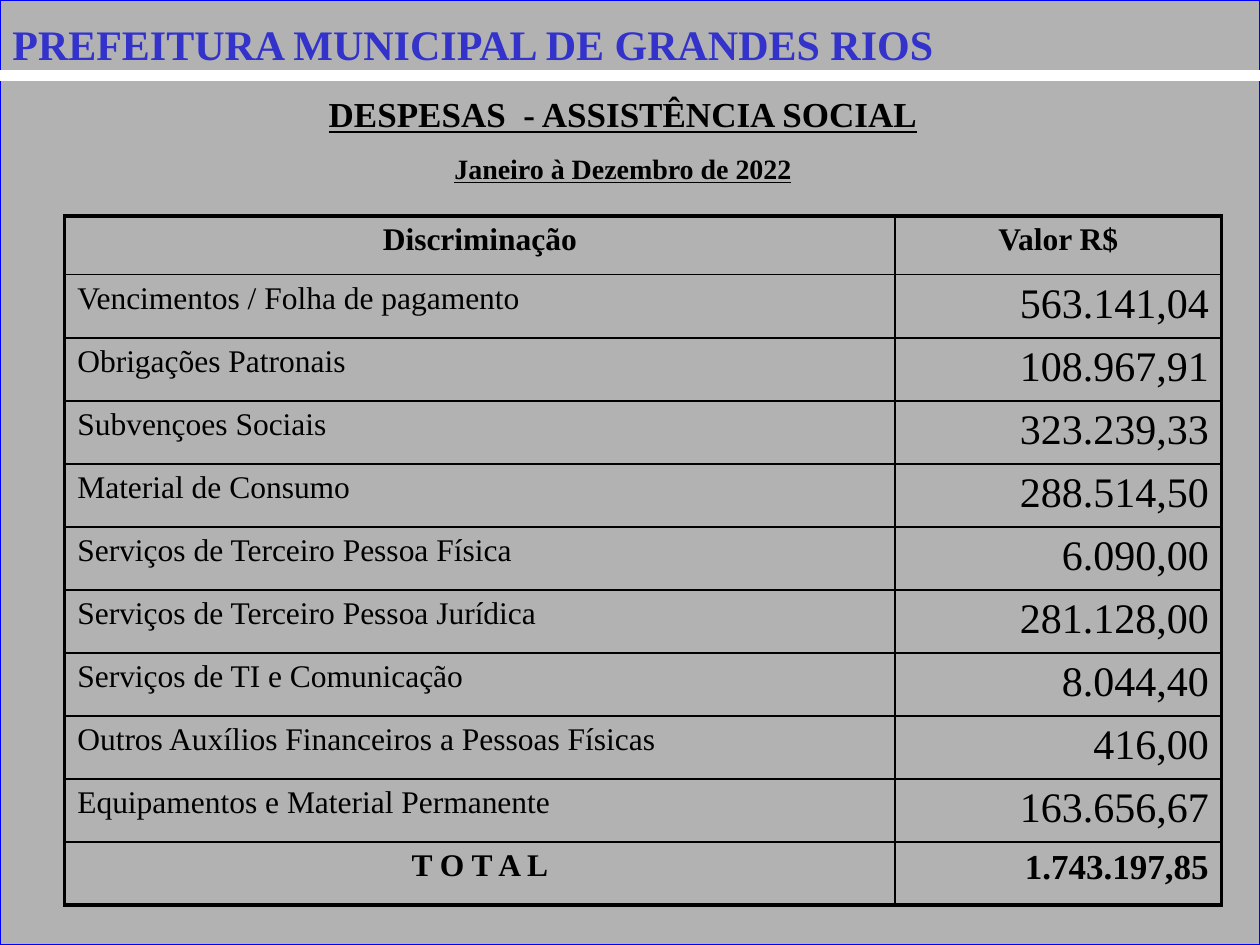
import pptx
import pptx.dml.color
import pptx.enum.shapes
import pptx.enum.text
import pptx.oxml
import pptx.oxml.ns
import pptx.util
from lxml import etree

Pt = pptx.util.Pt
ALIGN = pptx.enum.text.PP_ALIGN
FONT = "Times New Roman"
DRAWING_NS = pptx.oxml.ns.nsdecls("a")

# Content
municipality = "PREFEITURA MUNICIPAL DE GRANDES RIOS"
headings = [("DESPESAS  - ASSISTÊNCIA SOCIAL", 20), ("Janeiro à Dezembro de 2022", 16)]
column_titles = ("Discriminação", "Valor R$")
expenses = [
    ("Vencimentos / Folha de pagamento", "563.141,04"),
    ("Obrigações Patronais", "108.967,91"),
    ("Subvençoes Sociais", "323.239,33"),
    ("Material de Consumo", "288.514,50"),
    ("Serviços de Terceiro Pessoa Física", "6.090,00"),
    ("Serviços de Terceiro Pessoa Jurídica", "281.128,00"),
    ("Serviços de TI e Comunicação", "8.044,40"),
    ("Outros Auxílios Financeiros a Pessoas Físicas", "416,00"),
    ("Equipamentos e Material Permanente", "163.656,67"),
]
total = ("T O T A L", "1.743.197,85")

# Layout in points
slide_width, slide_height = 720, 540
table_left, table_top = 37, 123.5
column_widths = (474.5, 186.5)
header_height, row_height = 33.5, 36
thin, thick = 1, 2.25


def rgb(color):
    return pptx.dml.color.RGBColor.from_string(color)


def write(paragraph, text, size=18, color="000000", bold=False, underline=False,
          align=ALIGN.LEFT, line_spacing=None):
    paragraph.alignment = align
    paragraph.line_spacing = line_spacing
    run = paragraph.add_run()
    run.text = text
    font = run.font
    font.name, font.size, font.bold, font.underline = FONT, Pt(size), bold, underline
    font.color.rgb = rgb(color)
    return run


def add_text_frame(left, top, width, height):
    frame = slide.shapes.add_textbox(Pt(left), Pt(top), Pt(width), Pt(height)).text_frame
    frame.word_wrap = True
    return frame


def set_borders(cell, **widths):
    properties = cell._tc.get_or_add_tcPr()
    for position, (side, width) in enumerate(widths.items()):
        properties.insert(position, pptx.oxml.parse_xml(
            f'<a:ln{side} {DRAWING_NS} w="{Pt(width)}"><a:solidFill>'
            f'<a:srgbClr val="000000"/></a:solidFill></a:ln{side}>'))


presentation = pptx.Presentation()
presentation.slide_width, presentation.slide_height = Pt(slide_width), Pt(slide_height)
slide = presentation.slides.add_slide(presentation.slide_layouts[6])

# Grey background panel
panel = slide.shapes.add_shape(pptx.enum.shapes.MSO_SHAPE.RECTANGLE,
                               0, 0, Pt(slide_width), Pt(slide_height))
panel.shadow.inherit = False
panel.fill.solid()
panel.fill.fore_color.rgb = rgb("B2B2B2")
panel.line.color.rgb = rgb("0000FF")
panel.line.width = Pt(0.75)

# White rule under the municipality name
rule = slide.shapes.add_connector(pptx.enum.shapes.MSO_CONNECTOR.STRAIGHT,
                                  0, Pt(43.2), Pt(slide_width), Pt(43.2))
rule.line.color.rgb = rgb("FFFFFF")
rule.line.width = Pt(6)
etree.SubElement(rule._element.spPr, pptx.oxml.ns.qn("a:effectLst"))

# Headings
heading_frame = add_text_frame(65, 37.5, 582, 117)
for index, (heading, size) in enumerate(headings):
    paragraph = heading_frame.add_paragraph() if index else heading_frame.paragraphs[0]
    write(paragraph, heading, size=size, bold=True, underline=True,
          align=ALIGN.CENTER, line_spacing=1.5)

# Expense table
rows = [column_titles, *expenses, total]
last = len(rows) - 1
heights = [header_height] + [row_height] * last
table = slide.shapes.add_table(len(rows), 2, Pt(table_left), Pt(table_top),
                               Pt(sum(column_widths)), Pt(sum(heights))).table
table.first_row = table.horz_banding = False
for column, width in zip(table.columns, column_widths):
    column.width = Pt(width)
for index, (label, amount) in enumerate(rows):
    table.rows[index].height = Pt(heights[index])
    is_header, is_total = index == 0, index == last
    emphasis = is_header or is_total
    amount_size = 18 if is_header else 20 if is_total else 24
    formats = [
        dict(size=18, align=ALIGN.CENTER if emphasis else ALIGN.LEFT),
        dict(size=amount_size, align=ALIGN.CENTER if is_header else ALIGN.RIGHT),
    ]
    for side, (text, style) in enumerate(zip((label, amount), formats)):
        cell = table.cell(index, side)
        cell.fill.background()
        write(cell.text_frame.paragraphs[0], text, bold=emphasis, **style)
        set_borders(cell, L=thin if side else thick, R=thick if side else thin,
                    T=thick if is_header else thin, B=thick if is_total else thin)

# Municipality name with a text shadow
name_frame = add_text_frame(0, 7.2, 683, 36)
name_run = write(name_frame.paragraphs[0], municipality, size=24, color="3333CC", bold=True)
name_run.font.fill._xPr.find(pptx.oxml.ns.qn("a:solidFill")).addnext(pptx.oxml.parse_xml(
    f'<a:effectLst {DRAWING_NS}><a:outerShdw dist="35921" dir="2700000">'
    '<a:srgbClr val="808080"/></a:outerShdw></a:effectLst>'))

presentation.save("out.pptx")
